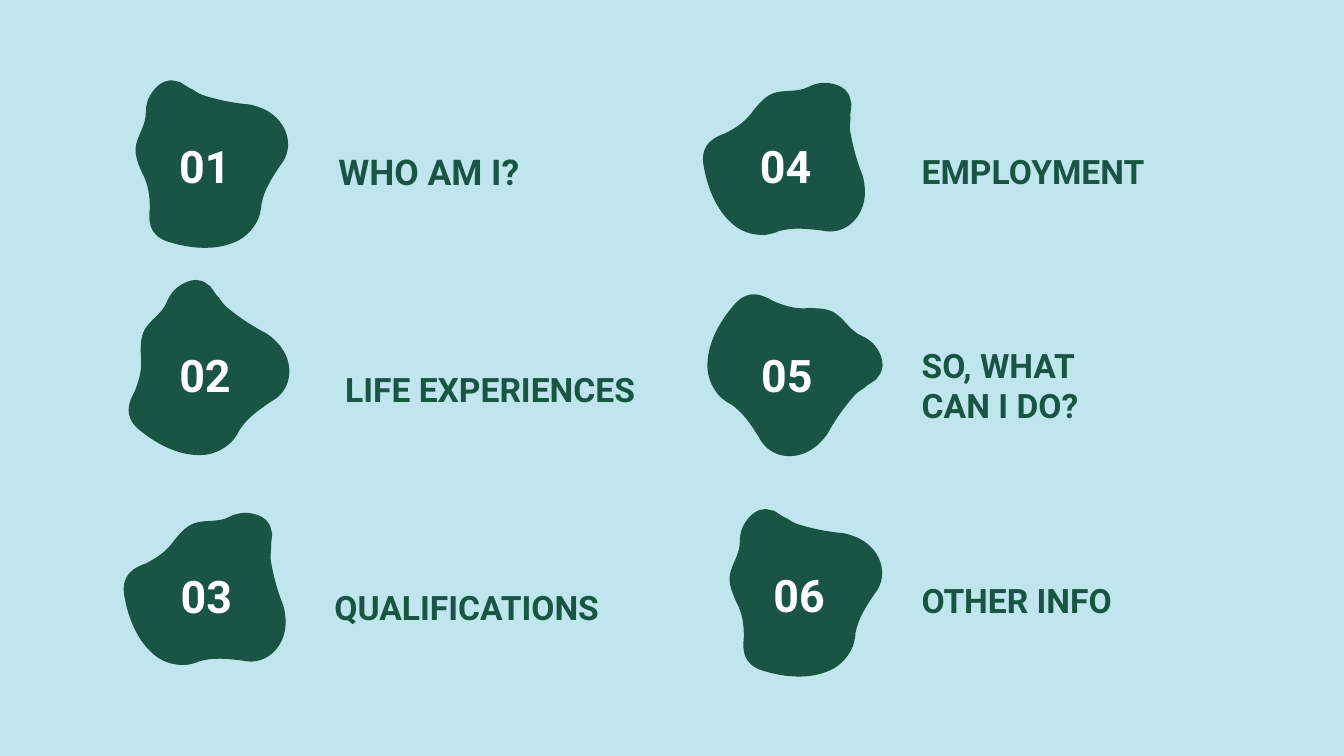
"""Build a contents slide with six numbered blobs and their section labels."""
from dataclasses import dataclass
from math import cos, radians, sin

from lxml.etree import SubElement
from pptx import Presentation
from pptx.dml.color import RGBColor as Color
from pptx.enum.text import MSO_ANCHOR as Anchor, MSO_AUTO_SIZE as Fit, PP_ALIGN as Align
from pptx.oxml.ns import qn
from pptx.util import Inches, Pt


@dataclass(frozen=True)
class Theme:
    sky: Color = Color.from_string("C0E6ED")
    forest: Color = Color.from_string("1A5444")
    white: Color = Color.from_string("FFFFFF")
    font: str = "Roboto"
    number_size: int = 24
    label_size: int = 18
    lead_size: int = 19


THEME = Theme()
SLIDE_WIDTH = Inches(10)
SLIDE_HEIGHT = SLIDE_WIDTH * 9 // 16
COLUMNS = (0.9, 5.22)
ROWS = (0.96, 2.51, 4.16)
LABEL_COLUMNS = (2.42, 6.76)
LABEL_ROWS = ((1.09, 2.71, 4.33), (1.09, 2.68, 4.28))
NUMBER_SIZE = (1.25, 0.55)
LABEL_SIZE = (2.6, 0.37)
BLOB_SIZE = 1.15
INSET = 0.1

SECTIONS = [
    {"number": "01", "label": ["WHO AM I?"], "tilt": 18.5, "size": THEME.lead_size},
    {"number": "02", "label": ["LIFE EXPERIENCES"], "tilt": 40.7, "label_nudge": 0.05},
    {"number": "03", "label": ["QUALIFICATIONS"], "tilt": 81.8, "nudge": (0.01, 0),
     "label_nudge": -0.03},
    {"number": "04", "label": ["EMPLOYMENT"], "tilt": 81.8},
    {"number": "05", "label": ["SO, WHAT", "CAN I DO?"], "tilt": 132.4, "nudge": (0.01, 0)},
    {"number": "06", "label": ["OTHER INFO"], "tilt": 18.5, "nudge": (0.1, -0.01)},
]
BLOB_OFFSETS = {18.5: (0.05, -0.26), 40.7: (0.01, -0.27),
                81.8: (0.03, -0.3), 132.4: (0.03, -0.36)}

OUTLINE_TILT = 18.5
OUTLINE_CENTRE = (1.525, 1.275)
OUTLINE_START = (1.92, 0.8)
OUTLINE_CURVES = [
    ((2.13, 0.87), (2.2, 1.09), (2.08, 1.23)),
    ((2.02, 1.32), (1.96, 1.41), (1.94, 1.52)),
    ((1.94, 1.55), (1.93, 1.59), (1.92, 1.62)),
    ((1.88, 1.71), (1.81, 1.78), (1.71, 1.81)),
    ((1.57, 1.86), (1.39, 1.84), (1.24, 1.79)),
    ((1.11, 1.74), (1.11, 1.64), (1.12, 1.55)),
    ((1.12, 1.46), (1.11, 1.37), (1.06, 1.28)),
    ((1.03, 1.21), (1, 1.14), (1.02, 1.07)),
    ((1.04, 0.99), (1.09, 0.93), (1.09, 0.84)),
    ((1.09, 0.77), (1.11, 0.71), (1.17, 0.65)),
    ((1.2, 0.62), (1.25, 0.59), (1.31, 0.61)),
    ((1.33, 0.61), (1.35, 0.62), (1.36, 0.63)),
    ((1.38, 0.64), (1.4, 0.66), (1.43, 0.67)),
    ((1.46, 0.69), (1.49, 0.71), (1.53, 0.72)),
    ((1.63, 0.75), (1.73, 0.77), (1.83, 0.78)),
    ((1.86, 0.78), (1.89, 0.79), (1.92, 0.8)),
]


def set_all(target, values):
    for name, value in values.items():
        setattr(target, name, value)


def place(shape, left, top, width, height):
    sides = {"left": left, "top": top, "width": width, "height": height}
    set_all(shape, {name: Inches(value) for name, value in sides.items()})


def upright(point):
    angle = radians(-OUTLINE_TILT)
    across, down = (value - middle for value, middle in zip(point, OUTLINE_CENTRE))
    return (Inches(BLOB_SIZE / 2 + across * cos(angle) - down * sin(angle)),
            Inches(BLOB_SIZE / 2 + across * sin(angle) + down * cos(angle)))


def add_step(contour, tag, points=()):
    step = SubElement(contour, qn(tag))
    for point in points:
        x, y = upright(point)
        SubElement(step, qn("a:pt"), x=str(x), y=str(y))


def curve_outline(blob):
    contour = next(blob.element.iter(qn("a:path")))
    for step in list(contour):
        contour.remove(step)
    for side in ("w", "h"):
        contour.set(side, str(Inches(BLOB_SIZE)))
    add_step(contour, "a:moveTo", [OUTLINE_START])
    for curve in OUTLINE_CURVES:
        add_step(contour, "a:cubicBezTo", curve)
    add_step(contour, "a:close")


def add_blob(page, left, top, tilt):
    side = Inches(BLOB_SIZE)
    builder = page.shapes.build_freeform(0, 0)
    builder.add_line_segments([(side, 0), (side, side), (0, side)])
    blob = builder.convert_to_shape()
    curve_outline(blob)
    place(blob, left, top, BLOB_SIZE, BLOB_SIZE)
    blob.rotation = tilt
    blob.shadow.inherit = False
    blob.fill.solid()
    blob.fill.fore_color.rgb = blob.line.color.rgb = THEME.forest
    blob.line.width = Pt(0.75)


def write(box, lines, size, color, align):
    frame = box.text_frame
    set_all(frame, {"word_wrap": True, "auto_size": Fit.NONE,
                    "vertical_anchor": Anchor.MIDDLE})
    set_all(frame, {f"margin_{side}": Inches(INSET)
                    for side in ("left", "right", "top", "bottom")})
    for index, line in enumerate(lines):
        para = frame.add_paragraph() if index else frame.paragraphs[0]
        para.alignment = align
        span = para.add_run()
        span.text = line
        set_all(span.font, {"name": THEME.font, "size": Pt(size), "bold": True})
        span.font.color.rgb = color


def add_section(page, index, section):
    column, row = divmod(index, len(ROWS))
    right, lower = section.get("nudge", (0, 0))
    left, top = COLUMNS[column] + right, ROWS[row] + lower
    across, down = BLOB_OFFSETS[section["tilt"]]
    add_blob(page, left + across, top + down, section["tilt"])

    if index:
        number = page.shapes.add_textbox(0, 0, 0, 0)
    else:
        number = page.shapes.title
        number.element.getparent().append(number.element)
    place(number, left, top, *NUMBER_SIZE)
    write(number, [section["number"]], THEME.number_size, THEME.white, Align.CENTER)

    label = page.shapes.add_textbox(0, 0, 0, 0)
    place(label, LABEL_COLUMNS[column] + section.get("label_nudge", 0),
          LABEL_ROWS[column][row], *LABEL_SIZE)
    write(label, section["label"], section.get("size", THEME.label_size),
          THEME.forest, Align.LEFT)


def main():
    deck = Presentation()
    set_all(deck, {"slide_width": SLIDE_WIDTH, "slide_height": SLIDE_HEIGHT})
    page = deck.slides.add_slide(deck.slide_layouts.get_by_name("Title Only"))
    page.background.fill.solid()
    page.background.fill.fore_color.rgb = THEME.sky
    for index, section in enumerate(SECTIONS):
        add_section(page, index, section)
    deck.save("out.pptx")


if __name__ == "__main__":
    main()
